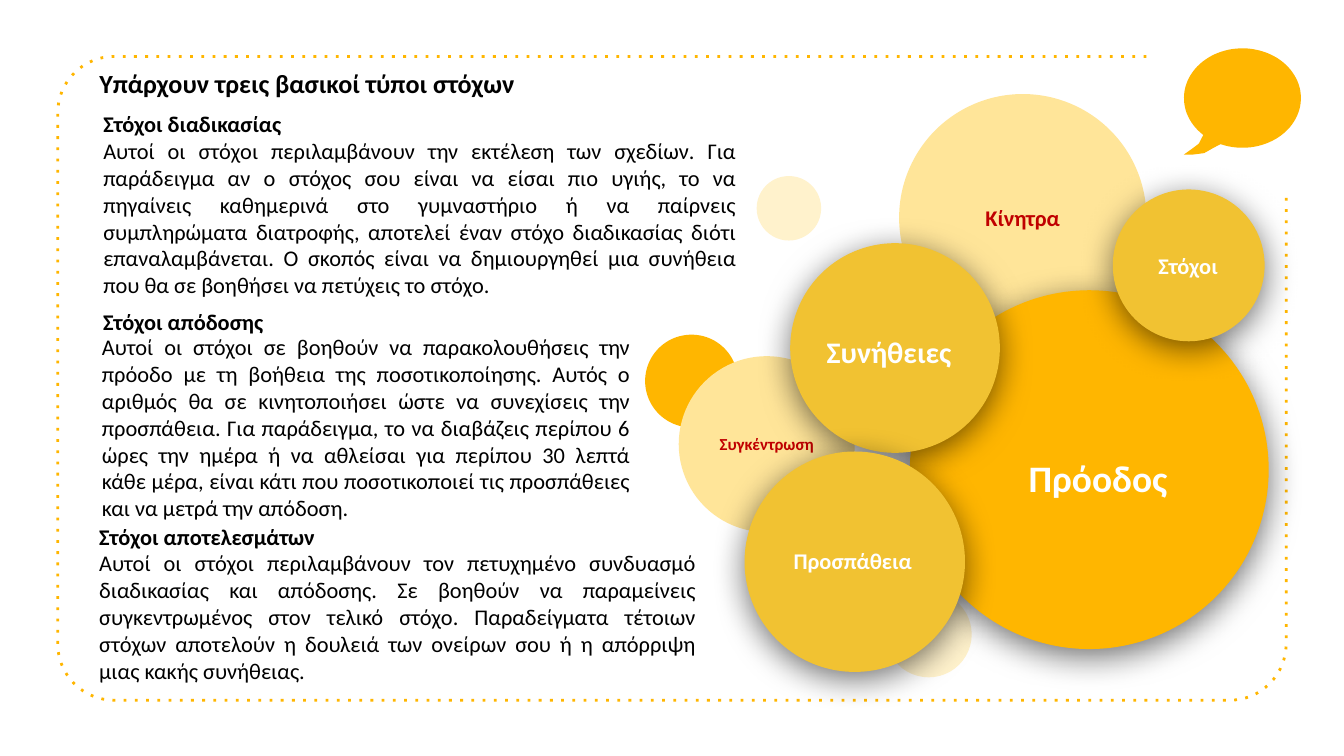
from math import cos, radians, sin

from lxml.etree import SubElement
from pptx import Presentation
from pptx.dml.color import RGBColor
from pptx.enum.shapes import MSO_SHAPE
from pptx.enum.text import MSO_ANCHOR, MSO_AUTO_SIZE, PP_ALIGN
from pptx.oxml.ns import qn
from pptx.util import Pt

SCALE = 9144
FONT = "Calibri"
COLORS = {
    "amber": "FFB600",
    "gold": "F1C232",
    "sand": "FFE599",
    "cream": "FFF2CC",
    "red": "C00000",
    "white": "FFFFFF",
    "black": "000000",
}

CIRCLES = [
    (659, 440, 64, "cream", False, None),
    (563, 131, 48, "cream", False, None),
    (669, 70, 184, "sand", False, ("Κίνητρα", 12)),
    (480, 249, 69, "amber", False, None),
    (505, 265, 131, "sand", False, ("Συγκέντρωση", 9)),
    (677, 216, 267, "amber", True, None),
    (588, 181, 156, "gold", True, None),
    (554, 336, 164, "gold", True, None),
    (828, 141, 113, "gold", True, None),
]

LABELS = [
    (708, 292, 218, 127, "Πρόοδος", 20),
    (579, 210, 165, 103, "Συνήθειες", 16),
    (574, 366, 121, 103, "Προσπάθεια", 12),
    (842, 160, 84, 75, "Στόχοι", 12),
]

PASSAGES = [
    (64, 45, 558, 34, 14, "Υπάρχουν τρεις βασικοί τύποι στόχων", None),
    (67, 77, 491, 151, 12, "Στόχοι διαδικασίας",
     "Αυτοί οι στόχοι περιλαμβάνουν την εκτέλεση των σχεδίων. Για παράδειγμα αν ο "
     "στόχος σου είναι να είσαι πιο υγιής, το να πηγαίνεις καθημερινά στο γυμναστήριο "
     "ή να παίρνεις συμπληρώματα διατροφής, αποτελεί έναν στόχο διαδικασίας διότι "
     "επαναλαμβάνεται. Ο σκοπός είναι να δημιουργηθεί μια συνήθεια που θα σε βοηθήσει "
     "να πετύχεις το στόχο."),
    (67, 224, 394, 30, 12, "Στόχοι απόδοσης", None),
    (64, 384, 464, 131, 12, "Στόχοι αποτελεσμάτων",
     "Αυτοί οι στόχοι περιλαμβάνουν τον πετυχημένο συνδυασμό διαδικασίας και απόδοσης. "
     "Σε βοηθούν να παραμείνεις συγκεντρωμένος στον τελικό στόχο. Παραδείγματα τέτοιων "
     "στόχων αποτελούν η δουλειά των ονείρων σου ή η απόρριψη μιας κακής συνήθειας."),
    (66, 243, 413, 151, 12, None,
     "Αυτοί οι στόχοι σε βοηθούν να παρακολουθήσεις την πρόοδο με τη βοήθεια της "
     "ποσοτικοποίησης. Αυτός ο αριθμός θα σε κινητοποιήσει ώστε να συνεχίσεις την "
     "προσπάθεια. Για παράδειγμα, το να διαβάζεις περίπου 6 ώρες την ημέρα ή να "
     "αθλείσαι για περίπου 30 λεπτά κάθε μέρα, είναι κάτι που ποσοτικοποιεί τις "
     "προσπάθειες και να μετρά την απόδοση."),
]


def px(length):
    return round(length * SCALE)


def color(name):
    return RGBColor.from_string(COLORS[name])


def paint(shape, name):
    shape.shadow.inherit = False
    shape.fill.solid()
    shape.fill.fore_color.rgb = color(name)
    shape.line.fill.background()


def add_shadow(shape):
    effects = shape._element.spPr.find(qn("a:effectLst"))
    shadow = SubElement(effects, qn("a:outerShdw"), blurRad=str(Pt(18)), dist=str(Pt(4)),
                        dir="5400000", algn="bl", rotWithShape="0")
    tone = SubElement(shadow, qn("a:srgbClr"), val=COLORS["black"])
    SubElement(tone, qn("a:alpha"), val="55000")


def add_span(paragraph, text, size, tone, bold):
    span = paragraph.add_run()
    span.text = text
    span.font.name = FONT
    span.font.size = Pt(size)
    span.font.bold = bold
    span.font.color.rgb = color(tone)


def center_text(shape, text, size, tone):
    frame = shape.text_frame
    frame.word_wrap = True
    frame.vertical_anchor = MSO_ANCHOR.MIDDLE
    frame.margin_left = frame.margin_right = px(10)
    frame.margin_top = frame.margin_bottom = px(10)
    paragraph = frame.paragraphs[0]
    paragraph.alignment = PP_ALIGN.CENTER
    add_span(paragraph, text, size, tone, True)


def add_circle(page, left, top, size, tone, raised, caption):
    circle = page.shapes.add_shape(MSO_SHAPE.OVAL, px(left), px(top), px(size), px(size))
    paint(circle, tone)
    if raised:
        add_shadow(circle)
    if caption:
        center_text(circle, *caption, "red")


def add_label(page, left, top, width, height, text, size):
    box = page.shapes.add_textbox(px(left), px(top), px(width), px(height))
    center_text(box, text, size, "white")


def add_passage(page, left, top, width, height, size, heading, body):
    box = page.shapes.add_textbox(px(left), px(top), px(width), px(height))
    frame = box.text_frame
    frame.word_wrap = True
    frame.auto_size = MSO_AUTO_SIZE.SHAPE_TO_FIT_TEXT
    parts = [(text, bold) for text, bold in ((heading, True), (body, False)) if text]
    for index, (text, bold) in enumerate(parts):
        paragraph = frame.add_paragraph() if index else frame.paragraphs[0]
        paragraph.alignment = PP_ALIGN.JUSTIFY
        add_span(paragraph, text, size, "black", bold)


def arc(center_x, center_y, radius_x, radius_y, start, end, steps):
    angles = [radians(start + (end - start) * i / steps) for i in range(steps + 1)]
    return [(center_x + radius_x * cos(a), center_y + radius_y * sin(a)) for a in angles]


def add_outline(page, points, closed):
    first, *rest = [(px(x), px(y)) for x, y in points]
    builder = page.shapes.build_freeform(*first, scale=1.0)
    builder.add_line_segments(rest, close=closed)
    return builder.convert_to_shape()


def add_frame(page):
    left, top, right, bottom, radius = 43, 42, 957, 521, 42
    points = [(853, top)]
    points += arc(left + radius, top + radius, radius, radius, 270, 180, 16)
    points += arc(left + radius, bottom - radius, radius, radius, 180, 90, 16)
    points += arc(right - radius, bottom - radius, radius, radius, 90, 0, 16)
    points.append((right, 146))
    frame = add_outline(page, points, False)
    frame.shadow.inherit = False
    frame.fill.background()
    frame.line.color.rgb = color("amber")
    frame.line.width = Pt(1.5)
    outline = frame._element.spPr.find(qn("a:ln"))
    SubElement(outline, qn("a:prstDash"), val="dot")


def add_bubble(page):
    points = arc(924.5, 73, 43.5, 37, 132, 472, 90)
    points += [(903, 110), (896, 114), (888, 115), (881, 115), (888, 110), (892, 107)]
    paint(add_outline(page, points, True), "amber")


def main():
    deck = Presentation()
    deck.slide_width = px(1000)
    deck.slide_height = deck.slide_width * 9 // 16
    page = deck.slides.add_slide(deck.slide_layouts[6])
    add_frame(page)
    for circle in CIRCLES:
        add_circle(page, *circle)
    for label in LABELS:
        add_label(page, *label)
    add_bubble(page)
    for passage in PASSAGES:
        add_passage(page, *passage)
    deck.save("out.pptx")


if __name__ == "__main__":
    main()
